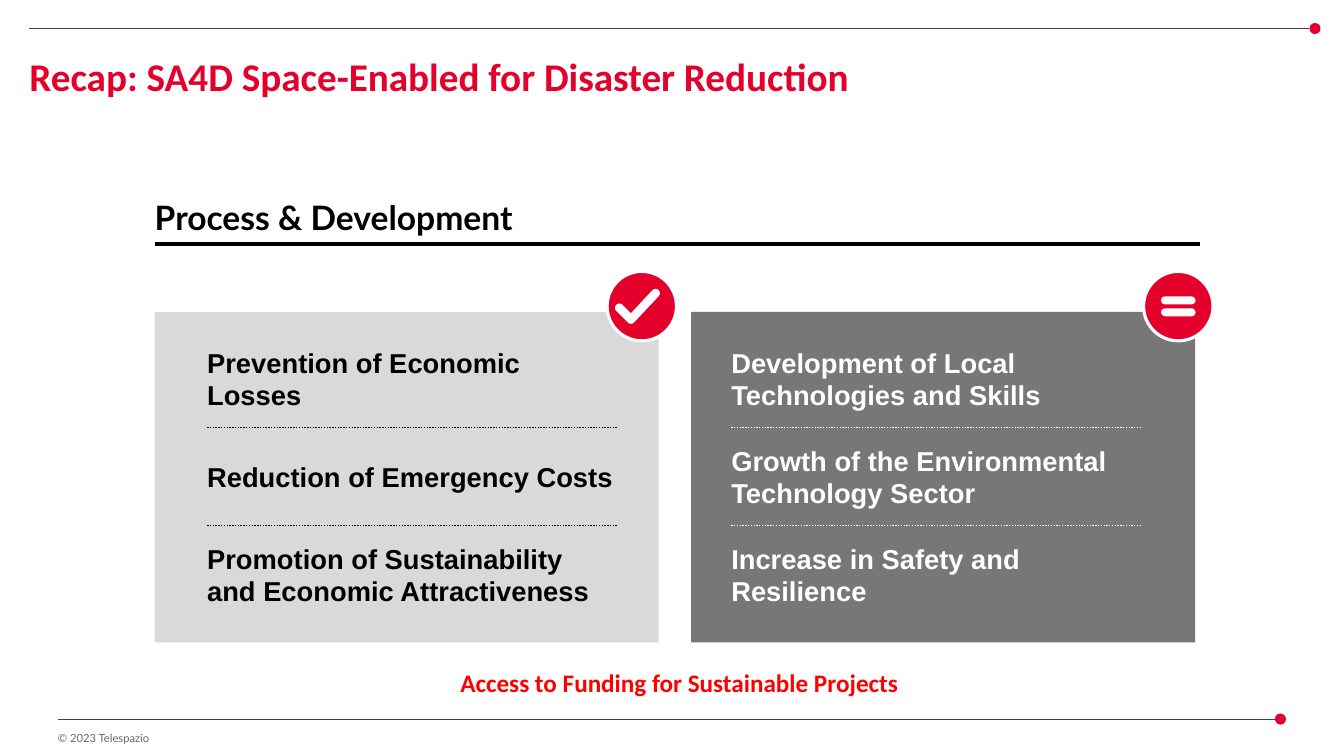
import math
from pptx import Presentation, util as u
from pptx.dml.color import RGBColor
from pptx.enum import dml, shapes, text
from pptx.oxml.ns import qn
from lxml import etree

HUES = {"red": "E4002B", "alert": "FF0000", "rule": "3D4144", "note": "5E6A71",
        "pale": "D9D9D9", "dark": "777777", "black": "000000", "white": "FFFFFF"}
KIND = shapes.MSO_SHAPE
MID = text.MSO_ANCHOR.MIDDLE
LOW = text.MSO_ANCHOR.BOTTOM
TOP = text.MSO_ANCHOR.TOP


class Deck:
    def __init__(self):
        self.file = Presentation()
        self.file.slide_width = u.Cm(33.87)
        self.file.slide_height = u.Cm(19.05)
        self.page = self.file.slides.add_slide(self.file.slide_layouts[5])

    def hue(self, name):
        return RGBColor.from_string(HUES[name])

    def paint(self, item, fill, edge=None):
        item.shadow.inherit = False
        item.fill.solid()
        item.fill.fore_color.rgb = self.hue(fill)
        if edge:
            item.line.color.rgb = self.hue(edge)
            item.line.width = u.Pt(2.25)
        else:
            item.line.fill.background()

    def shape(self, kind, x, y, w, h, fill, edge=None):
        item = self.page.shapes.add_shape(kind, u.Cm(x), u.Cm(y), u.Cm(w), u.Cm(h))
        self.paint(item, fill, edge)
        return item

    def line(self, x, y, end, hue, width, dots=False):
        item = self.page.shapes.add_connector(
            shapes.MSO_CONNECTOR.STRAIGHT, u.Cm(x), u.Cm(y), u.Cm(end), u.Cm(y))
        item.line.color.rgb = self.hue(hue)
        item.line.width = u.Pt(width)
        if dots:
            item.line.dash_style = dml.MSO_LINE.ROUND_DOT
        etree.SubElement(item._element.spPr, qn("a:effectLst"))

    def style(self, frame, words, face, size, hue, bold, anchor, inset=True):
        frame.text = words
        frame.word_wrap = True
        frame.vertical_anchor = anchor
        if inset:
            frame.margin_left = frame.margin_right = 0
            frame.margin_top = frame.margin_bottom = 0
        para = frame.paragraphs[0]
        para.alignment = text.PP_ALIGN.LEFT
        font = para.runs[0].font
        font.name, font.size, font.bold = face, u.Pt(size), bold
        font.color.rgb = self.hue(hue)

    def title(self, words, x, y, w, h):
        item = self.page.shapes.title
        item.left, item.top, item.width, item.height = map(u.Cm, (x, y, w, h))
        self.style(item.text_frame, words, "Calibri", 28, "red", True, LOW)
        item.text_frame.auto_size = text.MSO_AUTO_SIZE.NONE
        item.text_frame.paragraphs[0].line_spacing = 0.9

    def label(self, words, x, y, w, h, face, size, hue, bold=True, anchor=TOP, inset=True):
        item = self.page.shapes.add_textbox(u.Cm(x), u.Cm(y), u.Cm(w), u.Cm(h))
        self.style(item.text_frame, words, face, size, hue, bold, anchor, inset)
        item.text_frame.auto_size = text.MSO_AUTO_SIZE.SHAPE_TO_FIT_TEXT

    def rule(self, x, y, end):
        self.line(x, y, end, "rule", 0.75)
        self.shape(KIND.OVAL, end, y - 0.14, 0.28, 0.28, "red")

    def panel(self, x, fill, hue, left, rows):
        self.shape(KIND.RECTANGLE, x, 7.86, 12.7, 8.33, fill)
        for i, (words, high) in enumerate(rows):
            mid = 9.54 + i * 2.47
            self.label(words, left, mid - high / 2, 10.36, high, "Arial", 19.5, hue, anchor=MID)
            if i < len(rows) - 1:
                self.line(left, mid + 1.23, left + 10.36, hue, 1, True)

    def badge(self, x):
        self.shape(KIND.OVAL, x, 6.84, 1.75, 1.75, "red", "white")

    def tick(self, tail, bend, tip, size):
        dots = []
        for (x, y), first, last in ((tail, 316, 136), (bend, 136, 44), (tip, 44, -136)):
            for step in range(13):
                turn = math.radians(first + (last - first) * step / 12)
                dots.append((x + size * math.cos(turn), y + size * math.sin(turn)))
        dots.append((bend[0], bend[1] - size * math.sqrt(2)))
        dots = [(x * 1000, y * 1000) for x, y in dots]
        pen = self.page.shapes.build_freeform(*dots[0], scale=u.Cm(1) / 1000)
        pen.add_line_segments(dots[1:], close=True)
        self.paint(pen.convert_to_shape(), "white")

    def equal(self, x):
        for y in (7.47, 7.77):
            bar = self.shape(KIND.ROUNDED_RECTANGLE, x, y, 0.87, 0.2, "white")
            bar.adjustments[0] = 0.5


def main():
    deck = Deck()
    deck.rule(0.74, 0.72, 33)
    deck.rule(1.46, 18.12, 32.13)
    deck.label("© 2023 Telespazio", 1.46, 18.42, 5.84, 0.33, "Lato", 8, "note", False)
    deck.title("Recap: SA4D Space-Enabled for Disaster Reduction", 0.74, 1.17, 32.41, 1.35)
    deck.panel(3.9, "pale", "black", 5.22, (
        ("Prevention of Economic Losses", 0.84),
        ("Reduction of Emergency Costs", 0.84),
        ("Promotion of Sustainability and Economic Attractiveness", 1.68)))
    deck.panel(17.42, "dark", "white", 18.43, (
        ("Development of Local Technologies and Skills", 1.68),
        ("Growth of the Environmental Technology Sector", 1.68),
        ("Increase in Safety and Resilience", 0.84)))
    deck.badge(15.3)
    deck.tick((15.61, 7.76), (15.9, 8.05), (16.52, 7.39), 0.11)
    deck.line(3.9, 6.15, 30.25, "black", 2.25)
    deck.label("Process & Development", 3.9, 4.95, 10.74, 1.02, "Lato", 24, "black", anchor=LOW)
    deck.badge(28.82)
    deck.equal(29.26)
    deck.label("Access to Funding for Sustainable Projects", 11.35, 16.69, 16.94, 1.02,
               "Calibri", 18, "alert", inset=False)
    deck.file.save("out.pptx")


if __name__ == "__main__":
    main()
